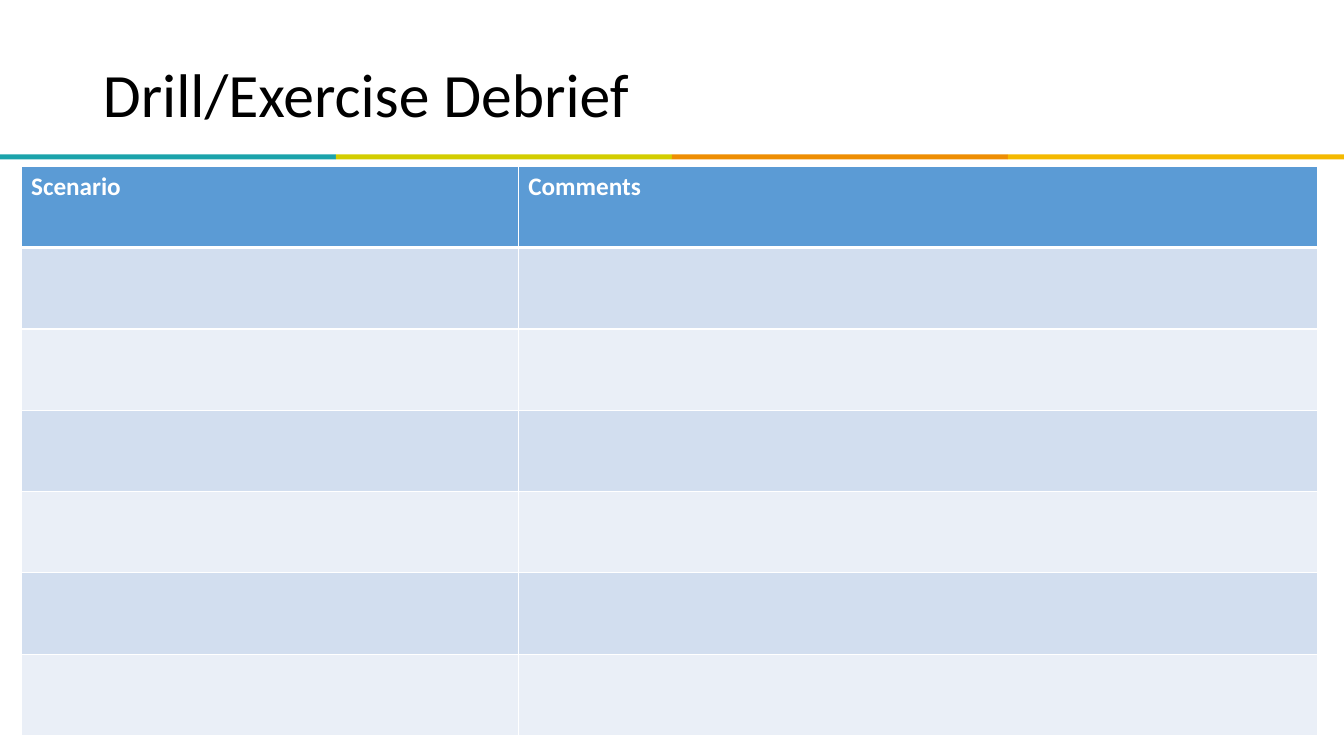
from dataclasses import dataclass
from lxml.etree import SubElement
from pptx import Presentation
from pptx.dml.color import RGBColor
from pptx.enum.shapes import MSO_SHAPE
from pptx.enum.text import MSO_ANCHOR, PP_ALIGN
from pptx.oxml.ns import qn
from pptx.slide import Slide
from pptx.table import _Cell
from pptx.text.text import TextFrame
from pptx.util import Cm, Pt


@dataclass(frozen=True)
class Theme:
    font: str = "Calibri"
    title_size: int = 44
    table_size: int = 18
    text: str = "000000"
    white: str = "FFFFFF"
    header: str = "5B9BD5"
    bands: tuple[str, ...] = ("D2DEEF", "EAEFF7")
    stripes: tuple[str, ...] = ("1BA3AB", "D3CD00", "EE8E03", "F4B900")


@dataclass(frozen=True)
class Column:
    heading: str
    width: float


THEME = Theme()
SLIDE_W, SLIDE_H = 33.87, 19.05
COLUMNS = (Column("Scenario", 12.53), Column("Comments", 20.15))
ROWS, ROW_H = 7, 2.05


def write(tf: TextFrame, text: str, *, size: int, color: str,
          bold: bool = False, spacing: float = 1.0) -> None:
    p = tf.paragraphs[0]
    p.alignment = PP_ALIGN.LEFT
    p.line_spacing = spacing
    r = p.add_run()
    r.text = text
    r.font.name = THEME.font
    r.font.size = Pt(size)
    r.font.bold = bold
    r.font.color.rgb = RGBColor.from_string(color)


def add_title(slide: Slide, text: str) -> None:
    sp = slide.shapes.title
    sp.left, sp.top, sp.width, sp.height = Cm(2.34), Cm(1.02), Cm(21.11), Cm(2.87)
    tf = sp.text_frame
    tf.word_wrap = True
    tf.vertical_anchor = MSO_ANCHOR.MIDDLE
    write(tf, text, size=THEME.title_size, color=THEME.text, spacing=0.9)


def add_stripes(slide: Slide) -> None:
    width = SLIDE_W / len(THEME.stripes)
    for i, color in enumerate(THEME.stripes):
        sp = slide.shapes.add_shape(
            MSO_SHAPE.RECTANGLE, Cm(i * width), Cm(3.89), Cm(width), Cm(0.13))
        sp.shadow.inherit = False
        sp.fill.solid()
        sp.fill.fore_color.rgb = RGBColor.from_string(color)
        sp.line.fill.background()


def style_cell(cell: _Cell, color: str, *, top: int, bottom: int) -> None:
    tc_pr = cell._tc.get_or_add_tcPr()
    for side, width in (("L", 1), ("R", 1), ("T", top), ("B", bottom)):
        ln = SubElement(tc_pr, qn(f"a:ln{side}"), w=str(Pt(width)))
        fill = SubElement(ln, qn("a:solidFill"))
        SubElement(fill, qn("a:srgbClr"), val=THEME.white)
    cell.fill.solid()
    cell.fill.fore_color.rgb = RGBColor.from_string(color)


def add_debrief_table(slide: Slide) -> None:
    width = sum(column.width for column in COLUMNS)
    table = slide.shapes.add_table(
        ROWS, len(COLUMNS), Cm(0.53), Cm(4.19), Cm(width), Cm(ROWS * ROW_H)).table
    for row in table.rows:
        row.height = Cm(ROW_H)
    for c, column in enumerate(COLUMNS):
        table.columns[c].width = Cm(column.width)
        style_cell(table.cell(0, c), THEME.header, top=1, bottom=3)
        write(table.cell(0, c).text_frame, column.heading,
              size=THEME.table_size, color=THEME.white, bold=True)
        for r in range(1, ROWS):
            band = THEME.bands[(r - 1) % len(THEME.bands)]
            style_cell(table.cell(r, c), band, top=3 if r == 1 else 1, bottom=1)


def main() -> None:
    prs = Presentation()
    prs.slide_width, prs.slide_height = Cm(SLIDE_W), Cm(SLIDE_H)
    slide = prs.slides.add_slide(prs.slide_layouts.get_by_name("Title Only"))
    add_stripes(slide)
    add_title(slide, "Drill/Exercise Debrief")
    add_debrief_table(slide)
    prs.save("out.pptx")


if __name__ == "__main__":
    main()
